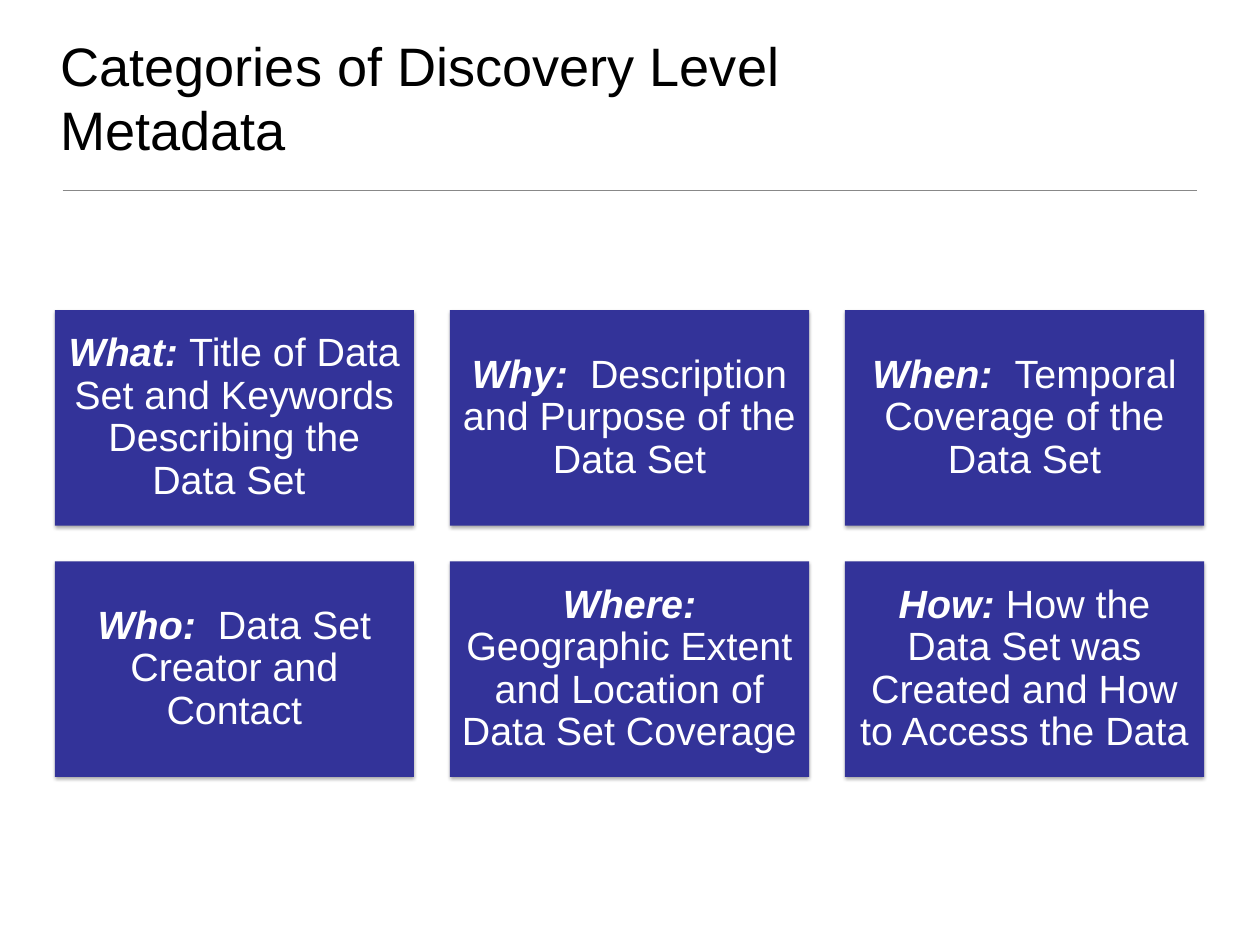
from lxml import etree
from pptx import Presentation
from pptx import util as u
from pptx.dml.color import RGBColor
from pptx.enum import shapes, text
from pptx.oxml import ns

TITLE_LINES = ["Categories of Discovery Level ", "Metadata"]
CATEGORIES = [
    ("What: ", "Title of Data Set and Keywords Describing the Data Set "),
    ("Why:  ", "Description and Purpose of the Data Set"),
    ("When:  ", "Temporal Coverage of the Data Set"),
    ("Who:  ", "Data Set Creator and Contact"),
    ("Where: ", "Geographic Extent and Location of Data Set Coverage"),
    ("How: ", "How the Data Set was Created and How to Access the Data"),
]

FONT = "Arial"
BLACK = RGBColor(0x00, 0x00, 0x00)
WHITE = RGBColor(0xFF, 0xFF, 0xFF)
NAVY = RGBColor(0x33, 0x33, 0x99)
GRAY = RGBColor(0x88, 0x88, 0x88)

# Grid: gaps are a tenth of a card's width, cards are 5:3
COLUMNS = 3
LEFT, WIDTH = 44.6, 934
CARD_TOP = 252
CARD_WIDTH = WIDTH / (COLUMNS + 0.1 * (COLUMNS - 1))
CARD_HEIGHT = 0.6 * CARD_WIDTH
GAP = 0.1 * CARD_WIDTH


def set_frame(frame, inset, anchor):
    frame.word_wrap = True
    frame.auto_size = text.MSO_AUTO_SIZE.NONE
    frame.vertical_anchor = anchor
    frame.margin_left = frame.margin_right = u.Pt(inset)
    frame.margin_top = frame.margin_bottom = u.Pt(inset)


def add_span(para, words, size, color, strong=False):
    span = para.add_run()
    span.text = words
    span.font.name = FONT
    span.font.size = u.Pt(size)
    span.font.color.rgb = color
    span.font.bold = span.font.italic = strong


def add_effects(shape, shadow=False):
    effects = etree.SubElement(shape._element.spPr, ns.qn("a:effectLst"))
    if shadow:
        outer = etree.SubElement(
            effects, ns.qn("a:outerShdw"), blurRad=str(u.Pt(3.1)),
            dist=str(u.Pt(1.8)), dir="5400000", rotWithShape="0")
        color = etree.SubElement(outer, ns.qn("a:srgbClr"), val="000000")
        etree.SubElement(color, ns.qn("a:alpha"), val="35000")


def add_card(page, index, label, description):
    row, column = divmod(index, COLUMNS)
    card = page.shapes.add_shape(
        shapes.MSO_SHAPE.RECTANGLE,
        u.Pt(LEFT + column * (CARD_WIDTH + GAP)),
        u.Pt(CARD_TOP + row * (CARD_HEIGHT + GAP)),
        u.Pt(CARD_WIDTH), u.Pt(CARD_HEIGHT))
    card.fill.solid()
    card.fill.fore_color.rgb = NAVY
    card.line.fill.background()
    add_effects(card, shadow=True)
    set_frame(card.text_frame, 9.6, text.MSO_ANCHOR.MIDDLE)
    para = card.text_frame.paragraphs[0]
    para.alignment = text.PP_ALIGN.CENTER
    para.line_spacing = 0.9
    para.space_after = u.Pt(11.2)
    add_span(para, label, 32, WHITE, strong=True)
    add_span(para, description, 32, WHITE)


def main():
    deck = Presentation()
    deck.slide_width, deck.slide_height = u.Pt(1024), u.Pt(768)
    page = deck.slides.add_slide(deck.slide_layouts[5])

    # Title
    title = page.shapes.title
    title.left, title.top = u.Pt(LEFT), u.Pt(26)
    title.width, title.height = u.Pt(WIDTH), u.Pt(110)
    set_frame(title.text_frame, 4.5, text.MSO_ANCHOR.BOTTOM)
    para = title.text_frame.paragraphs[0]
    para.alignment = text.PP_ALIGN.LEFT
    for number, words in enumerate(TITLE_LINES):
        if number:
            para.add_line_break()
        add_span(para, words, 44, BLACK)

    # Rule under the title
    rule = page.shapes.add_connector(
        shapes.MSO_CONNECTOR.STRAIGHT,
        u.Pt(51), u.Pt(154.8), u.Pt(973), u.Pt(154.8))
    rule.line.color.rgb = GRAY
    rule.line.width = u.Pt(1)
    add_effects(rule)

    # Category cards
    for index, (label, description) in enumerate(CATEGORIES):
        add_card(page, index, label, description)

    deck.save("out.pptx")


if __name__ == "__main__":
    main()
